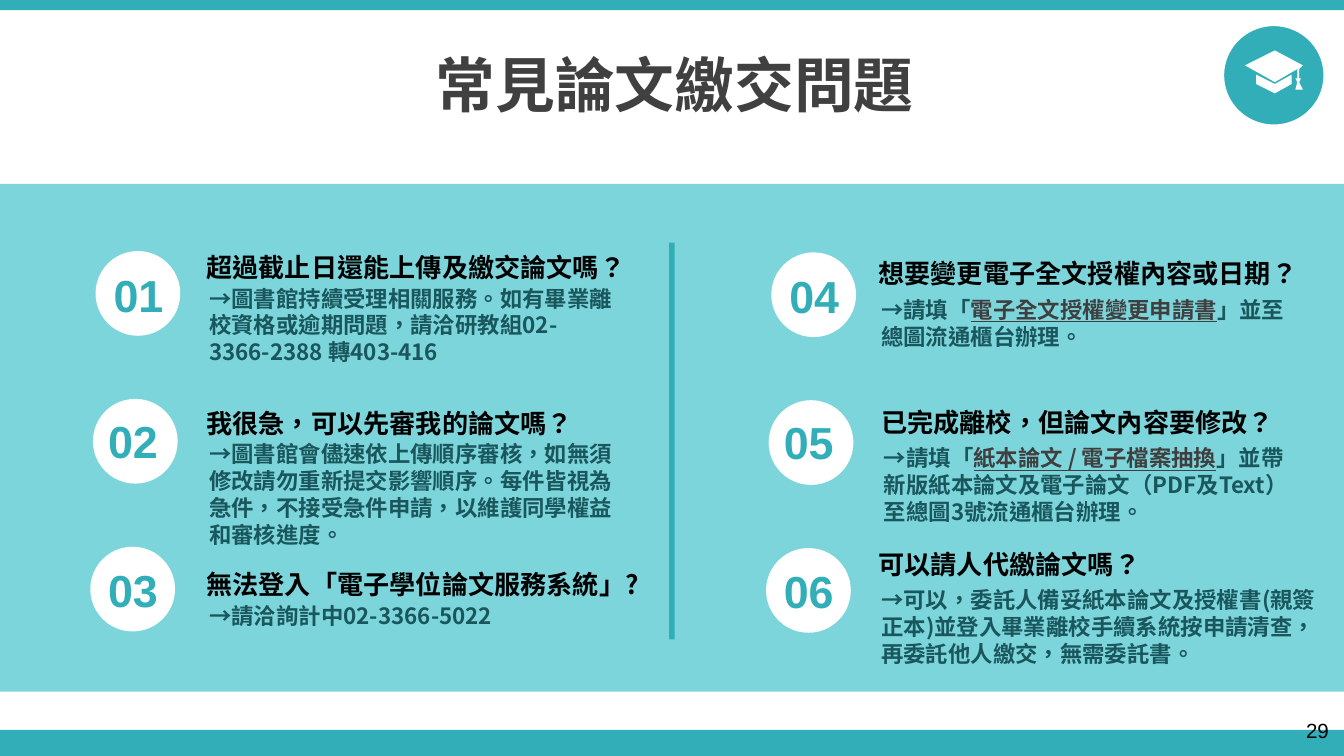
from pptx import Presentation
from pptx.dml.color import RGBColor
from pptx.enum.shapes import MSO_SHAPE as Preset
from pptx.enum.text import MSO_ANCHOR as Anchor, MSO_AUTO_SIZE as AutoSize, PP_ALIGN as Align
from pptx.oxml.ns import qn
from pptx.util import Pt
from lxml.etree import SubElement

# Content: heading, answer runs (text, underlined), heading left and top,
# heading width, answer width and height
TITLE = "常見論文繳交問題"
PAGE_NUMBER = "29"
QUESTIONS = [
    ("超過截止日還能上傳及繳交論文嗎？",
     [("→圖書館持續受理相關服務。如有畢業離校資格或逾期問題，請洽研教組02-3366-2388 轉403-416", False)],
     (103.5, 131), 225.5, (230.5, 51)),
    ("我很急，可以先審我的論文嗎？",
     [("→圖書館會儘速依上傳順序審核，如無須修改請勿重新提交影響順序。"
       "每件皆視為急件，不接受急件申請，以維護同學權益和審核進度。", False)],
     (103.5, 214.5), 240, (237.5, 65.5)),
    ("無法登入「電子學位論文服務系統」?",
     [("→請洽詢計中02-3366-5022", False)],
     (103.5, 301), 240, (225.5, 21.5)),
    ("想要變更電子全文授權內容或日期？",
     [("→請填「", False), ("電子全文授權變更申請書", True), ("」並至總圖流通櫃台辦理。", False)],
     (463.5, 134.5), 240, (237.5, 36)),
    ("已完成離校，但論文內容要修改？",
     [("→請填「", False), ("紙本論文 / 電子檔案抽換", True),
      ("」並帶新版紙本論文及電子論文（PDF及Text）至總圖3號流通櫃台辦理。", False)],
     (465, 214), 240, (237.5, 51)),
    ("可以請人代繳論文嗎？",
     [("→可以，委託人備妥紙本論文及授權書(親簽正本)並登入畢業離校手續系統按申請清查，"
       "再委託他人繳交，無需委託書。", False)],
     (463.5, 290), 240, (254, 51)),
]

# Look
TEAL, PALE_TEAL, DARK_TEAL = "32AEB8", "7DD5DC", "19575C"
WHITE, BLACK, GREY, LINK_GREY = "FFFFFF", "000000", "404040", "3F3F3F"
CJK_FONT, LATIN_FONT = "Noto Sans CJK SC", "Arial"
LINE_FACTOR = 1.2

# Layout
WIDTH, HEIGHT = 720, 405
ROWS = 3
CIRCLE, CIRCLE_LEFT, CIRCLE_TOP = 45.4, 51.2, 134.5
ROW_SHIFT, ROW_PITCH = -1.4, 79.2
COLUMN_X, COLUMN_Y = 362, 0.7
NUMBER_SPOTS = [(49, 139.7), (46.1, 218.2), (46.1, 298)]
ANSWER_INDENT = 1.5
ANSWER_DROPS = [18, 20.5]

# Cap icon outlines: board with tassel, then the part below it
CAP = [
    [(682.6, 27.4), (698.4, 35.3), (696.2, 36.7), (696.2, 41.8), (697, 42.5), (696.2, 43.9),
     (697.7, 47.5), (694.1, 47.5), (694.8, 43.9), (694.1, 42.5), (695.2, 41.8), (695.2, 37.4),
     (682.6, 43.9), (666.7, 35.3)],
    [(673.2, 40.3), (682.6, 45.4), (691.9, 40.3), (691.9, 45.4), (682.6, 50.4), (673.2, 45.4)],
]


def color(value):
    return RGBColor.from_string(value)


def paint(shape, fill, line=None):
    shape.shadow.inherit = False
    shape.fill.solid()
    shape.fill.fore_color.rgb = color(fill)
    if line:
        shape.line.color.rgb = color(line)
        shape.line.width = Pt(2)
    else:
        shape.line.fill.background()


def add_preset(preset, left, top, width, height, fill, line=None):
    shape = slide.shapes.add_shape(preset, Pt(left), Pt(top), Pt(width), Pt(height))
    paint(shape, fill, line)


def write(frame, runs, size, ink, font=CJK_FONT, bold=True, align=Align.LEFT):
    paragraph = frame.paragraphs[0]
    paragraph.alignment = align
    paragraph.font.size = Pt(size)
    paragraph.font.bold = bold
    paragraph.font.name = font
    paragraph.font.color.rgb = color(ink)
    if font == CJK_FONT:
        paragraph.line_spacing = Pt(size * LINE_FACTOR)
    for text, underlined in runs:
        run = paragraph.add_run()
        run.text = text
        if underlined:
            run.font.underline = True
            run.font.color.rgb = color(LINK_GREY)
        if font == CJK_FONT:
            run.font.name = font
            properties = run.font._element
            properties.set("lang", "zh-TW")
            SubElement(properties, qn("a:ea")).set("typeface", font)


def add_text(left, top, width, height, runs, size, ink, wrap=True, **style):
    box = slide.shapes.add_textbox(Pt(left), Pt(top), Pt(width), Pt(height))
    box.text_frame.word_wrap = wrap
    box.text_frame.auto_size = AutoSize.SHAPE_TO_FIT_TEXT
    write(box.text_frame, runs, size, ink, **style)


presentation = Presentation()
presentation.slide_width, presentation.slide_height = Pt(WIDTH), Pt(HEIGHT)
slide = presentation.slides.add_slide(presentation.slide_layouts[5])

# Title
title = slide.shapes.title
title.left, title.top, title.width, title.height = Pt(1.5), Pt(22.5), Pt(WIDTH), Pt(45)
title.text_frame.vertical_anchor = Anchor.MIDDLE
title.text_frame.auto_size = AutoSize.NONE
write(title.text_frame, [(TITLE, False)], 32, GREY, align=Align.CENTER)

# Bars, panel and column divider
for left, top, width, height, fill in [
    (0, 0, WIDTH, 5.5, TEAL),
    (0, 391, WIDTH, 14, TEAL),
    (0, 98.5, WIDTH, 272, PALE_TEAL),
    (358.5, 130, 3, 212.5, TEAL),
]:
    add_preset(Preset.RECTANGLE, left, top, width, height, fill)

# Numbered questions, filled column by column
for index, (heading, answer, (left, top), heading_width, answer_size) in enumerate(QUESTIONS):
    column, row = divmod(index, ROWS)
    shift_x, shift_y = column * COLUMN_X, column * COLUMN_Y
    add_preset(Preset.OVAL, CIRCLE_LEFT + row * ROW_SHIFT + shift_x,
               CIRCLE_TOP + row * ROW_PITCH + shift_y, CIRCLE, CIRCLE, WHITE)
    number_left, number_top = NUMBER_SPOTS[row]
    add_text(number_left + shift_x, number_top + shift_y, 50.4, 36,
             [(f"{index + 1:02}", False)], 24, TEAL, font=LATIN_FONT, align=Align.CENTER)
    add_text(left + ANSWER_INDENT, top + ANSWER_DROPS[column], *answer_size,
             answer, 12, DARK_TEAL)
    add_text(left, top, heading_width, 24.5, [(heading, False)], 14, BLACK)

# Graduation cap badge
add_preset(Preset.OVAL, 654.8, 13, 55.2, 54.7, TEAL, WHITE)
builder = slide.shapes.build_freeform(*CAP[0][0], scale=Pt(1))
builder.add_line_segments(CAP[0][1:])
for outline in CAP[1:]:
    builder.move_to(*outline[0])
    builder.add_line_segments(outline[1:])
paint(builder.convert_to_shape(), WHITE)

# Page number
add_text(692.6, 381, 26.6, 21, [(PAGE_NUMBER, False)], 11, BLACK,
         wrap=False, font=LATIN_FONT, bold=False)

presentation.save("out.pptx")
